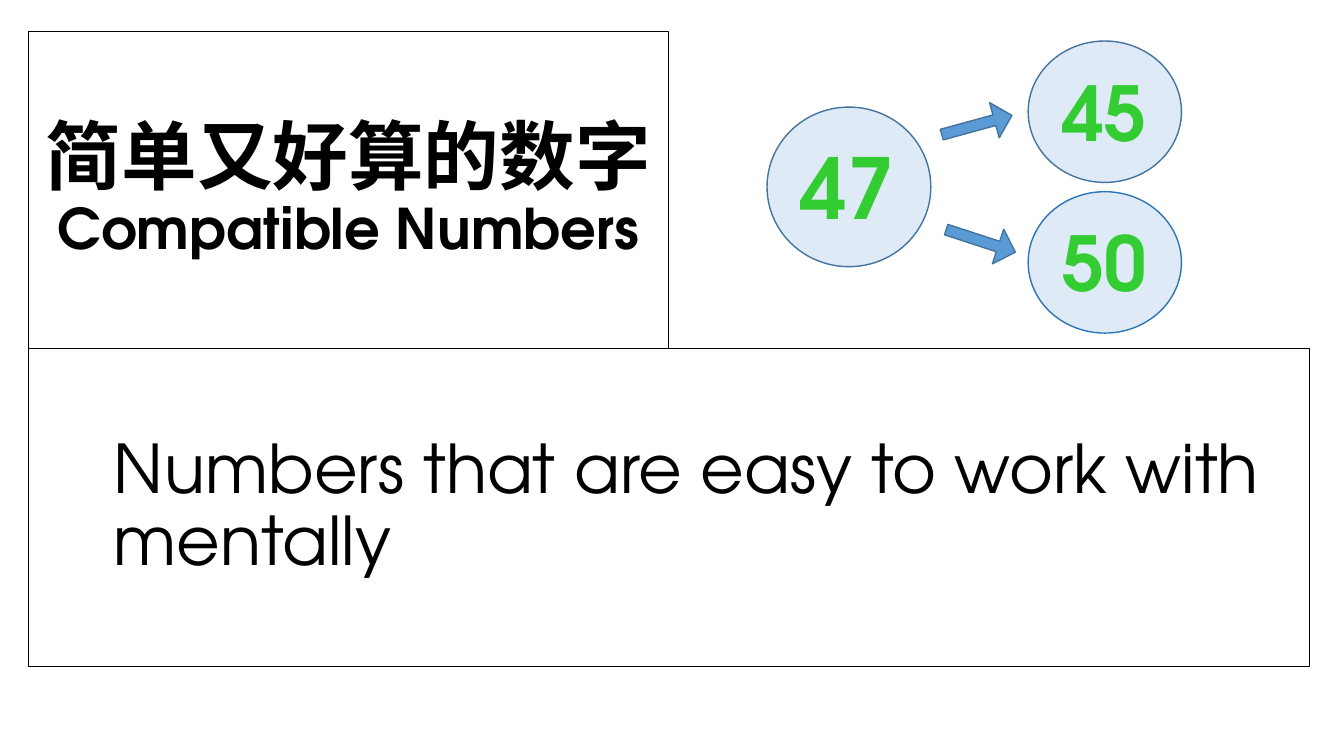
from pptx import Presentation
from pptx.dml.color import RGBColor
from pptx.enum import shapes, text
from pptx.oxml.ns import qn
from pptx.util import Pt
from lxml import etree

BLACK = RGBColor(0, 0, 0)
GREEN = RGBColor(0x33, 0xCC, 0x33)
PALE_BLUE = RGBColor(0xDE, 0xEB, 0xF7)
MID_BLUE = RGBColor(0x5B, 0x9B, 0xD5)
DARK_BLUE = RGBColor(0x43, 0x73, 0x9E)
BRIGHT_BLUE = RGBColor(0x2E, 0x75, 0xB6)
LATIN = "TeX Gyre Adventor"

# Content: title lines of (text, font, size)
TITLE = [
    [("简单又好算", "Roboto", 54), ("的", "Arial", 54), ("数字", "Roboto", 54)],
    [("Compatible Numbers", LATIN, 40)],
]
MEANING = "Numbers that are easy to work with mentally"
# Number, size, circle outline, circle frame, label frame
NUMBERS = [
    ("47", 60, DARK_BLUE, (547.9, 76.5, 117, 114), (564.5, 93.6, 97, 80)),
    ("50", 54, BRIGHT_BLUE, (734.4, 136.9, 109.5, 101), (751.7, 150.5, 85, 73)),
    ("45", 54, DARK_BLUE, (734.4, 29.3, 109.5, 101), (751.7, 43.2, 85, 73)),
]
ARROWS = [((671.8, 76.3), -15.3), ((674.6, 159.1), 18.1)]
ARROW_SIZE = (52, 26)

# The two framed panels share a left edge and a height
LEFT, TOP, PANEL_HEIGHT = 20.2, 22.4, 226.8
TITLE_FRAME = (LEFT, TOP, 457.2, PANEL_HEIGHT)
MEANING_FRAME = (LEFT, TOP + PANEL_HEIGHT, 915, PANEL_HEIGHT)


def points(frame):
    return [Pt(value) for value in frame]


def add_span(para, words, font=LATIN, size=54, color=BLACK, bold=False):
    span = para.add_run()
    span.text = words
    span.font.name, span.font.size, span.font.bold = font, Pt(size), bold
    span.font.color.rgb = color
    east_asian = etree.SubElement(span.font._element, qn("a:ea"))
    east_asian.set("typeface", font)


def outline(shape, color, width):
    shape.line.color.rgb = color
    shape.line.width = Pt(width)


def add_filled(page, kind, frame, fill, line):
    shape = page.shapes.add_shape(kind, *points(frame))
    shape.shadow.inherit = False
    shape.fill.solid()
    shape.fill.fore_color.rgb = fill
    outline(shape, line, 1)
    return shape


def format_panel(box, align):
    outline(box, BLACK, 0.75)
    frame = box.text_frame
    frame.word_wrap = True
    frame.auto_size = text.MSO_AUTO_SIZE.NONE
    frame.vertical_anchor = text.MSO_ANCHOR.MIDDLE
    para = frame.paragraphs[0]
    para.alignment, para.line_spacing = align, 0.9
    return para


deck = Presentation()
deck.slide_width, deck.slide_height = Pt(960), Pt(540)
page = deck.slides.add_slide(deck.slide_layouts[5])

# Title panel
title = page.shapes.title
title.left, title.top, title.width, title.height = points(TITLE_FRAME)
para = format_panel(title, text.PP_ALIGN.CENTER)
for number, line in enumerate(TITLE):
    if number:
        para.add_line_break()
    for words, font, size in line:
        add_span(para, words, font=font, size=size, bold=True)

# Meaning panel
meaning = page.shapes.add_textbox(*points(MEANING_FRAME))
para = format_panel(meaning, text.PP_ALIGN.LEFT)
para._p.get_or_add_pPr().set("marL", str(Pt(54)))
add_span(para, MEANING, size=48)

# Circles, then the numbers on them
for _, _, line, circle, _ in NUMBERS:
    add_filled(page, shapes.MSO_SHAPE.OVAL, circle, PALE_BLUE, line)
for words, size, _, _, label in NUMBERS:
    box = page.shapes.add_textbox(*points(label))
    box.text_frame.word_wrap = True
    add_span(box.text_frame.paragraphs[0], words, size=size, color=GREEN, bold=True)

# Arrows from 47 to its neighbours
for corner, turn in ARROWS:
    arrow = add_filled(page, shapes.MSO_SHAPE.RIGHT_ARROW, corner + ARROW_SIZE,
                       MID_BLUE, DARK_BLUE)
    arrow.adjustments[0], arrow.adjustments[1] = 0.3, 0.5
    arrow.rotation = turn

deck.save("out.pptx")
